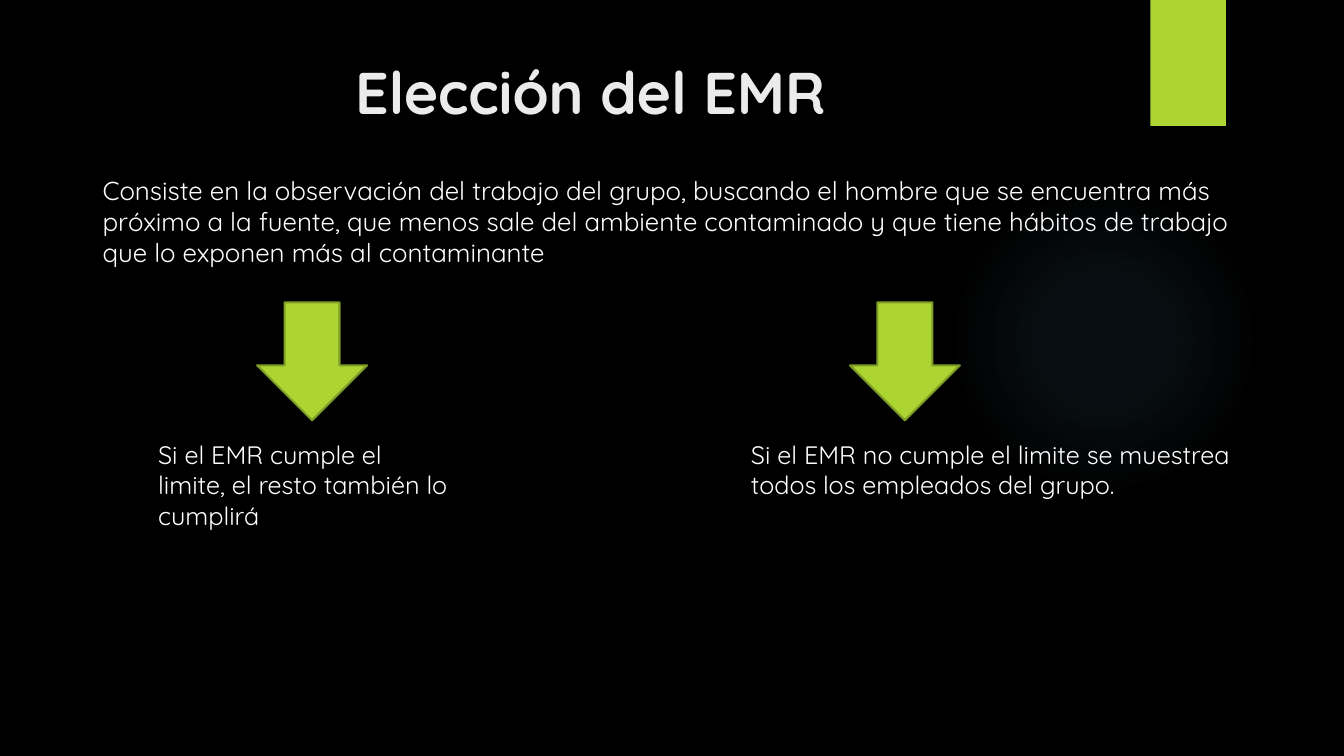
"""Build the slide on choosing the EMR, with its two outcomes."""
from lxml import etree
from pptx import Presentation, util as u
from pptx.dml.color import RGBColor
from pptx.enum import shapes, text
from pptx.oxml import ns

BLACK = RGBColor(0x00, 0x00, 0x00)
WHITE = RGBColor(0xFF, 0xFF, 0xFF)
OFF_WHITE = RGBColor(0xEB, 0xEB, 0xEB)
LIME = RGBColor(0xAC, 0xD4, 0x33)
OLIVE = RGBColor(0x7F, 0x9D, 0x26)
SKY = RGBColor(0x7A, 0xC4, 0xF0)
FONT = "Quicksand"
ARROW_WIDTH, ARROW_HEIGHT = 1.09, 1.17
ARROW_TOP, OUTCOME_TOP = 3, 4.31
ARROW_INDENT = 1.08
GLOW_STOPS = [(0, 7), (36, 6), (69, 0)]
OUTCOMES = [
    (1.47, 3.13, "Si el EMR cumple el limite, el resto también lo cumplirá"),
    (7.35, 5.24, "Si el EMR no cumple el limite se muestrea todos los empleados del grupo."),
]


def add_plain_shape(kind, left, top, width, height, color):
    shape = slide.shapes.add_shape(kind, *map(u.Inches, (left, top, width, height)))
    shape.shadow.inherit = False
    shape.fill.solid()
    shape.fill.fore_color.rgb = color
    shape.line.fill.background()
    return shape


def write_text(shape, wording, size, color, bold=False):
    frame = shape.text_frame
    frame.word_wrap = True
    frame.auto_size = text.MSO_AUTO_SIZE.NONE
    frame.vertical_anchor = text.MSO_ANCHOR.TOP
    frame.text = wording
    font = frame.paragraphs[0].runs[0].font
    font.name, font.size, font.bold = FONT, u.Pt(size), bold
    font.color.rgb = color


presentation = Presentation()
presentation.slide_width = u.Inches(13.33)
presentation.slide_height = u.Inches(7.5)
slide = presentation.slides.add_slide(presentation.slide_layouts[5])
slide.background.fill.solid()
slide.background.fill.fore_color.rgb = BLACK

glow = add_plain_shape(shapes.MSO_SHAPE.OVAL, 9.41, 1.83, 3.08, 3.08, SKY)
stops = "".join(
    f'<a:gs pos="{position * 1000}"><a:srgbClr val="{SKY}">'
    f'<a:alpha val="{opacity * 1000}"/></a:srgbClr></a:gs>'
    for position, opacity in GLOW_STOPS
)
gradient = etree.fromstring(
    f'<a:gradFill {ns.nsdecls("a")}><a:gsLst>{stops}</a:gsLst><a:path path="circle">'
    '<a:fillToRect l="50000" t="50000" r="50000" b="50000"/></a:path></a:gradFill>'
)
properties = glow._element.spPr
properties.replace(properties.find(ns.qn("a:solidFill")), gradient)

add_plain_shape(shapes.MSO_SHAPE.RECTANGLE, 11.41, 0, 0.75, 1.25, LIME)

title = slide.shapes.title
title.left, title.top, title.width, title.height = map(u.Inches, (0.71, 0.5, 10.29, 1.53))
write_text(title, "Elección del EMR", 42, OFF_WHITE, bold=True)
title.text_frame.paragraphs[0].alignment = text.PP_ALIGN.CENTER

definition = slide.shapes.add_textbox(*map(u.Inches, (0.92, 1.68, 11.5, 1)))
write_text(
    definition,
    "Consiste en la observación del trabajo del grupo, buscando el hombre que se encuentra "
    "más próximo a la fuente, que menos sale del ambiente contaminado y que tiene hábitos "
    "de trabajo que lo exponen más al contaminante",
    18.5,
    WHITE,
)

for left, width, wording in OUTCOMES:
    arrow = add_plain_shape(
        shapes.MSO_SHAPE.DOWN_ARROW, left + ARROW_INDENT, ARROW_TOP, ARROW_WIDTH, ARROW_HEIGHT, LIME
    )
    arrow.line.color.rgb = OLIVE
    arrow.line.width = u.Pt(1.5)
    outcome = slide.shapes.add_textbox(*map(u.Inches, (left, OUTCOME_TOP, width, 0.71)))
    write_text(outcome, wording, 18, WHITE)

presentation.save("out.pptx")
